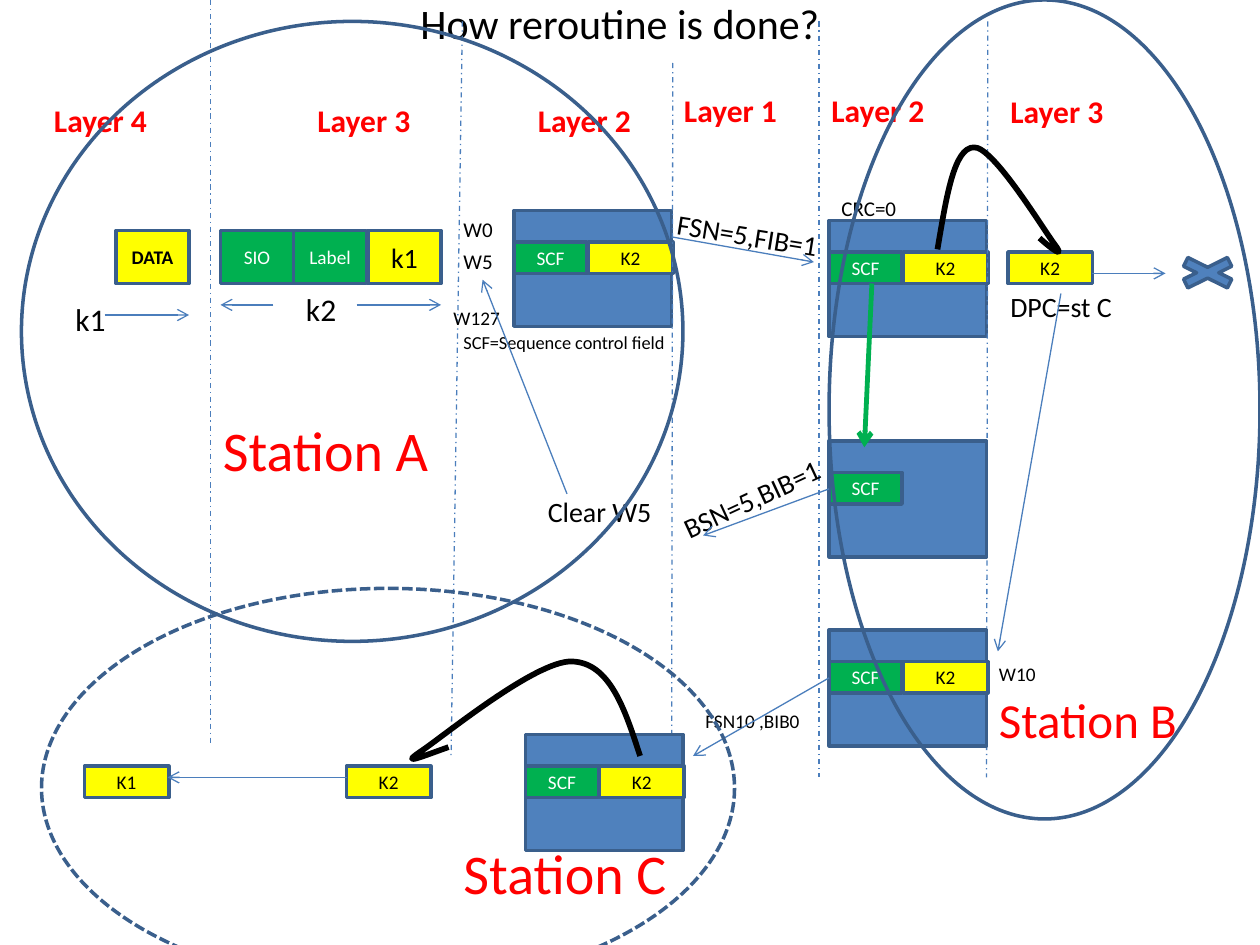
"""Build the slide on rerouting between stations A, B and C."""
from dataclasses import dataclass
from typing import Optional

from pptx import Presentation
from pptx.dml.color import RGBColor
from pptx.enum.dml import MSO_LINE
from pptx.enum.shapes import MSO_CONNECTOR, MSO_SHAPE
from pptx.enum.text import MSO_ANCHOR, MSO_AUTO_SIZE, PP_ALIGN
from pptx.oxml.ns import qn
from pptx.util import Inches, Pt
from lxml.etree import SubElement

FONT = "Calibri"
BLACK, WHITE, RED = "000000", "FFFFFF", "FF0000"
YELLOW, GREEN, BLUE = "FFFF00", "00B050", "4F81BD"
OUTLINE, ARROW = "3A5F8C", "4B7EBC"
FIELD_WIDTH, FIELD_HEIGHT, MESSAGE_HEIGHT = 0.58, 0.25, 0.42
KEY_WIDTH, KEY_OFFSET, FIELD_OFFSET = 0.67, 0.59, 0.25


@dataclass
class Label:
    text: str
    left: float
    top: float
    width: float
    height: float
    size: float
    color: str = BLACK
    bold: bool = False
    rotation: float = 0


@dataclass
class Cell:
    text: str
    left: float
    top: float
    width: float
    height: float
    fill: str
    size: float = 11
    bold: bool = False


@dataclass
class Packet:
    left: float
    top: float
    has_key: bool = True


@dataclass
class Link:
    start: tuple[float, float]
    end: tuple[float, float]
    color: str = ARROW
    weight: float = 0.75


@dataclass
class Station:
    left: float
    top: float
    width: float
    height: float
    dash: Optional[MSO_LINE] = None


def rgb(code: str) -> RGBColor:
    """Turn a hex string into a colour."""
    return RGBColor.from_string(code)


def add_text(frame, text: str, size: float, color: str, bold: bool = False, align=None) -> None:
    """Add one formatted run to the first paragraph of a frame."""
    paragraph = frame.paragraphs[0]
    paragraph.alignment = align
    run = paragraph.add_run()
    run.text = text
    run.font.name = FONT
    run.font.size = Pt(size)
    run.font.bold = bold
    run.font.color.rgb = rgb(color)


def draw_shape(slide, kind, left: float, top: float, width: float, height: float,
               fill: Optional[str] = None):
    """Draw an outlined preset shape, hollow when no fill is given."""
    shape = slide.shapes.add_shape(kind, Inches(left), Inches(top), Inches(width), Inches(height))
    shape.shadow.inherit = False
    shape.line.color.rgb = rgb(OUTLINE)
    shape.line.width = Pt(2)
    if fill:
        shape.fill.solid()
        shape.fill.fore_color.rgb = rgb(fill)
    else:
        shape.fill.background()
    return shape


def draw_label(slide, label: Label) -> None:
    """Draw a free-standing text label."""
    box = slide.shapes.add_textbox(Inches(label.left), Inches(label.top),
                                   Inches(label.width), Inches(label.height))
    box.rotation = label.rotation
    box.text_frame.word_wrap = True
    box.text_frame.auto_size = MSO_AUTO_SIZE.SHAPE_TO_FIT_TEXT
    add_text(box.text_frame, label.text, label.size, label.color, label.bold)


def draw_cell(slide, cell: Cell) -> None:
    """Draw one message field with its centred name."""
    shape = draw_shape(slide, MSO_SHAPE.RECTANGLE, cell.left, cell.top,
                       cell.width, cell.height, cell.fill)
    shape.text_frame.vertical_anchor = MSO_ANCHOR.MIDDLE
    color = WHITE if cell.fill == GREEN else BLACK
    add_text(shape.text_frame, cell.text, cell.size, color, cell.bold, PP_ALIGN.CENTER)


def key_cell(text: str, left: float, top: float) -> Cell:
    """Describe a yellow key field."""
    return Cell(text, left, top, KEY_WIDTH, FIELD_HEIGHT, YELLOW)


def draw_packet(slide, packet: Packet) -> None:
    """Draw a layer 2 buffer with its SCF field and optional key."""
    draw_shape(slide, MSO_SHAPE.RECTANGLE, packet.left, packet.top, 1.25, 0.92, BLUE)
    field_top = packet.top + FIELD_OFFSET
    draw_cell(slide, Cell("SCF", packet.left, field_top, FIELD_WIDTH, FIELD_HEIGHT, GREEN))
    if packet.has_key:
        draw_cell(slide, key_cell("K2", packet.left + KEY_OFFSET, field_top))


def draw_link(slide, link: Link, boundary: bool = False) -> None:
    """Draw an arrow, or a dash-dot layer boundary."""
    connector = slide.shapes.add_connector(MSO_CONNECTOR.STRAIGHT,
                                           *map(Inches, link.start + link.end))
    connector.line.color.rgb = rgb(link.color)
    connector.line.width = Pt(link.weight)
    properties = connector._element.spPr
    if boundary:
        connector.line.dash_style = MSO_LINE.DASH_DOT
    else:
        SubElement(properties.find(qn("a:ln")), qn("a:tailEnd"), type="arrow")
    SubElement(properties, qn("a:effectLst"))


def draw_curve(slide, points: list[tuple[float, float]]) -> None:
    """Draw a chain of cubic curves, each led by two control points."""
    builder = slide.shapes.build_freeform(*map(Inches, points[0]))
    builder.add_line_segments([tuple(map(Inches, point)) for point in points[1:]], close=False)
    hop = builder.convert_to_shape()
    hop.shadow.inherit = False
    hop.fill.background()
    hop.line.color.rgb = rgb(BLACK)
    hop.line.width = Pt(3.25)
    outline = next(hop._element.iter(qn("a:path")))
    segments = outline.findall(qn("a:lnTo"))
    for first in range(0, len(segments), 3):
        curve = SubElement(outline, qn("a:cubicBezTo"))
        for segment in segments[first:first + 3]:
            curve.append(segment[0])
            outline.remove(segment)


LAYERS = [("Layer 4", 0.33, 0.75, 1.75), ("Layer 3", 2.42, 0.75, 1.75),
          ("Layer 2", 4.17, 0.75, 1.08), ("Layer 1", 5.33, 0.67, 1.08),
          ("Layer 2", 6.5, 0.67, 1.08), ("Layer 3", 7.92, 0.68, 1.08)]
LABELS = [Label(name, left, top, width, 0.4, 18, RED, True) for name, left, top, width in LAYERS] + [
    Label("W0", 3.58, 1.67, 0.5, 0.3, 12), Label("W5", 3.58, 1.92, 0.5, 0.3, 12),
    Label("W127", 3.5, 2.38, 0.58, 0.29, 11), Label("W10", 7.83, 5.21, 0.5, 0.29, 11),
    Label("CRC=0", 6.58, 1.5, 0.75, 0.3, 12),
    Label("k1", 0.5, 2.33, 0.58, 0.4, 18), Label("k2", 2.33, 2.25, 0.58, 0.4, 18),
    Label("FSN=5,FIB=1", 5.27, 1.71, 1.67, 0.37, 16, rotation=9.1),
    Label("BSN=5,BIB=1", 5.27, 3.71, 1.67, 0.37, 16, rotation=335.1),
    Label("SCF=Sequence control field", 3.58, 2.58, 2, 0.28, 10.5),
    Label("Clear W5", 4.25, 3.88, 1.67, 0.37, 16), Label("DPC=st C", 7.92, 2.25, 1.67, 0.37, 16),
    Label("FSN10 ,BIB0", 5.5, 5.58, 1, 0.29, 11),
    Label("Station A", 1.67, 3.25, 1.92, 0.64, 32, RED),
    Label("Station B", 7.83, 5.42, 2.83, 0.57, 28, RED),
    Label("Station C", 3.58, 6.61, 1.92, 0.64, 32, RED)]
MESSAGE = [("DATA", 0.92, YELLOW, 11, True), ("Label", 2.33, GREEN, 11, False),
           ("SIO", 1.75, GREEN, 11, False), ("k1", 2.92, YELLOW, 16, False)]
CELLS = [Cell(text, left, 1.83, FIELD_WIDTH, MESSAGE_HEIGHT, fill, size, bold)
         for text, left, fill, size, bold in MESSAGE]
CELLS += [key_cell("K2", 8, 2), key_cell("K2", 2.75, 6.08), key_cell("K1", 0.67, 6.08)]
FIRST_PACKETS = [Packet(4.08, 1.67), Packet(6.58, 1.75)]
LATER_PACKETS = [Packet(6.58, 3.5, has_key=False), Packet(6.58, 5), Packet(4.17, 5.83)]
BOUNDARIES = [Link((1.67, 0), (1.67, 5.92)), Link((3.67, 0.17), (3.58, 6)),
              Link((6.5, 0.17), (6.5, 6.17)), Link((5.34, 0.5), (5.33, 6.17)),
              Link((7.84, 0.17), (7.83, 6.17))]
ARROWS = [Link((5.33, 1.88), (6.46, 2.08)), Link((0.83, 2.5), (1.5, 2.5)),
          Link((2.17, 2.42), (1.75, 2.42)), Link((2.83, 2.42), (3.5, 2.42)),
          Link((6.58, 3.88), (5.58, 4.25)), Link((6.92, 2.25), (6.86, 3.55), GREEN, 2.75),
          Link((4.5, 3.92), (3.83, 2.22)), Link((6.58, 5.38), (5.5, 6)),
          Link((8.67, 2.17), (9.25, 2.17)), Link((8.42, 2.33), (7.92, 5.17)),
          Link((2.75, 6.17), (1.33, 6.17))]
HOPS = [[(7.44, 1.98), (7.51, 1.57), (7.57, 1.17), (7.73, 1.17), (7.88, 1.16),
         (8.28, 1.82), (8.37, 1.94), (8.46, 2.06), (8.35, 1.98), (8.25, 1.89)],
        [(5.08, 6), (4.96, 5.63), (4.84, 5.26), (4.54, 5.25), (4.25, 5.24),
         (3.5, 5.86), (3.33, 5.97), (3.17, 6.08), (3.36, 6), (3.56, 5.93)]]
STATIONS = [Station(0.17, 0.17, 5.25, 4.92), Station(6.58, 0, 3.42, 6.5),
            Station(0.33, 4.67, 5.5, 3.17, MSO_LINE.SQUARE_DOT)]


def main() -> None:
    """Assemble and save the slide."""
    deck = Presentation()
    deck.slide_width, deck.slide_height = Inches(10), Inches(7.5)
    slide = deck.slides.add_slide(deck.slide_layouts[5])
    title = slide.shapes.title
    title.left, title.top, title.width, title.height = map(Inches, (0.42, -0.17, 9, 0.7))
    title.text_frame.vertical_anchor = MSO_ANCHOR.MIDDLE
    add_text(title.text_frame, "How reroutine is done?", 24, BLACK, align=PP_ALIGN.CENTER)
    for packet in FIRST_PACKETS:
        draw_packet(slide, packet)
    for boundary in BOUNDARIES:
        draw_link(slide, boundary, boundary=True)
    for packet in LATER_PACKETS:
        draw_packet(slide, packet)
    for cell in CELLS:
        draw_cell(slide, cell)
    for label in LABELS:
        draw_label(slide, label)
    for arrow in ARROWS:
        draw_link(slide, arrow)
    for hop in HOPS:
        draw_curve(slide, hop)
    draw_shape(slide, MSO_SHAPE.MATH_MULTIPLY, 9.25, 2, KEY_WIDTH, 0.33, BLUE)
    for station in STATIONS:
        ring = draw_shape(slide, MSO_SHAPE.OVAL, station.left, station.top,
                          station.width, station.height)
        ring.line.dash_style = station.dash
    deck.save("out.pptx")


if __name__ == "__main__":
    main()
